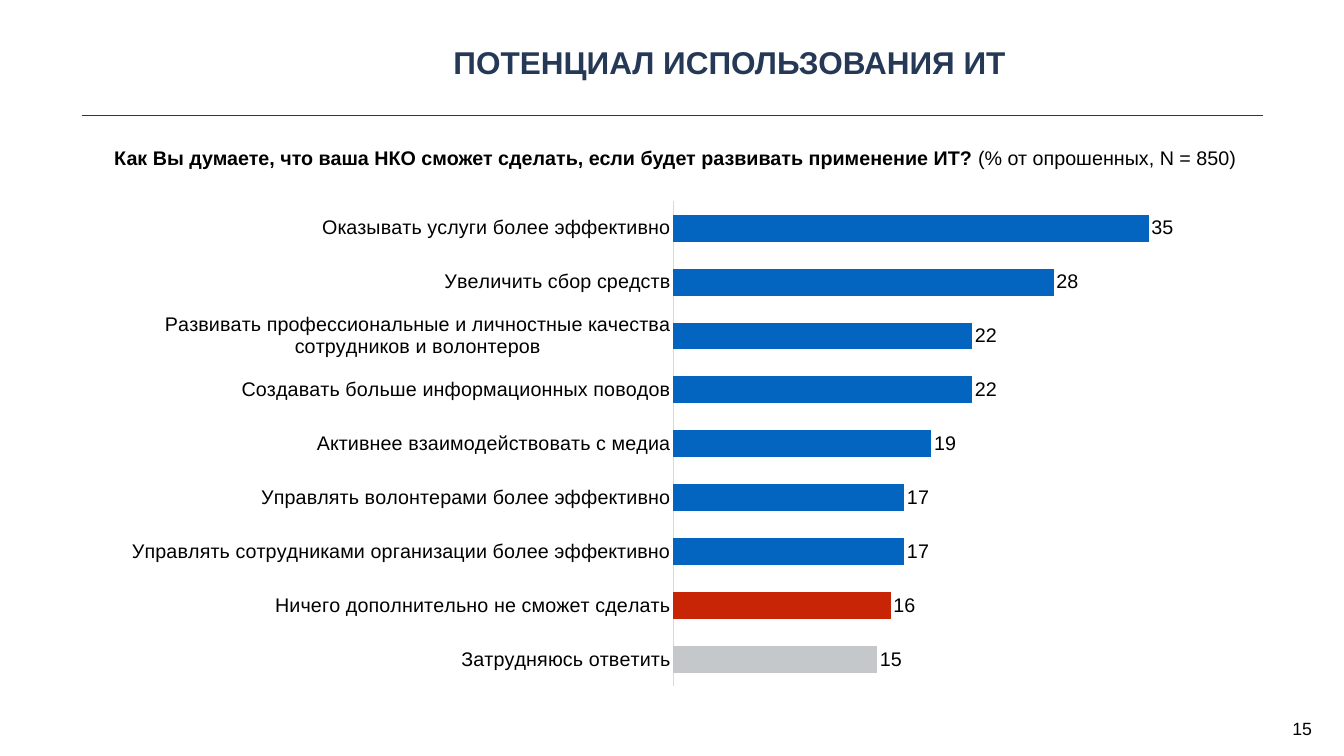
import pptx
import pptx.chart.data
import pptx.dml.color
import pptx.enum.chart
import pptx.enum.shapes
import pptx.enum.text
import pptx.oxml
import pptx.oxml.ns
import pptx.util
from lxml import etree

Inches, Pt = pptx.util.Inches, pptx.util.Pt
RGBColor = pptx.dml.color.RGBColor
qn = pptx.oxml.ns.qn

# Content
TITLE = "ПОТЕНЦИАЛ ИСПОЛЬЗОВАНИЯ ИТ"
QUESTION = "Как Вы думаете, что ваша НКО сможет сделать, если будет развивать применение ИТ? "
SAMPLE = "(% от опрошенных, N = 850)"
PAGE = "15"

NAVY = RGBColor(0x25, 0x39, 0x57)
BLACK = RGBColor(0, 0, 0)
BLUE = RGBColor(0x03, 0x65, 0xC0)
RED = RGBColor(0xC8, 0x25, 0x06)
GRAY = RGBColor(0xC4, 0xC8, 0xCB)
AXIS_GRAY = RGBColor(0xD9, 0xD9, 0xD9)
FONT = "Arial"

ANSWERS = [
    ("Оказывать услуги более эффективно", 35, BLUE),
    ("Увеличить сбор средств", 28, BLUE),
    ("Развивать профессиональные и личностные качества сотрудников и волонтеров", 22, BLUE),
    ("Создавать больше информационных поводов", 22, BLUE),
    ("Активнее взаимодействовать с медиа", 19, BLUE),
    ("Управлять волонтерами более эффективно", 17, BLUE),
    ("Управлять сотрудниками организации более эффективно", 17, BLUE),
    ("Ничего дополнительно не сможет сделать", 16, RED),
    ("Затрудняюсь ответить", 15, GRAY),
]
PLOT_AREA = {"x": 0.501, "y": 0.021, "w": 0.487, "h": 0.958}


def format_font(font, size=20, color=BLACK, bold=False):
    font.name, font.size, font.bold = FONT, Pt(size), bold
    font.color.rgb = color


def write(sp, text, **fmt):
    """Add a formatted run to the shape's first paragraph."""
    r = sp.text_frame.paragraphs[0].add_run()
    r.text = text
    format_font(r.font, **fmt)


def place(sp, left, top, width, height, inset=(0.06, 0.06), wrap=True):
    """Set the shape's box and make its paragraph centred and unbulleted."""
    sp.left, sp.top = Inches(left), Inches(top)
    sp.width, sp.height = Inches(width), Inches(height)
    tf = sp.text_frame
    tf.auto_size = pptx.enum.text.MSO_AUTO_SIZE.NONE
    tf.word_wrap = wrap
    tf.vertical_anchor = pptx.enum.text.MSO_ANCHOR.MIDDLE
    tf.margin_left = tf.margin_right = Inches(inset[0])
    tf.margin_top = tf.margin_bottom = Inches(inset[1])
    p = tf.paragraphs[0]
    p.alignment = pptx.enum.text.PP_ALIGN.CENTER
    p.space_before = Pt(0)
    pPr = p._p.get_or_add_pPr()
    pPr.set("marL", "0")
    pPr.set("indent", "0")
    etree.SubElement(pPr, qn("a:buNone"))


prs = pptx.Presentation()
prs.slide_width, prs.slide_height = Inches(18.96), Inches(10.67)
s = prs.slides.add_slide(prs.slide_layouts[1])

# Title and the rule below it
title, question = s.placeholders
place(title, 2.77, 0.55, 15.05, 0.66)
write(title, TITLE, size=32, color=NAVY, bold=True)

rule = s.shapes.add_connector(pptx.enum.shapes.MSO_CONNECTOR.STRAIGHT,
                              Inches(1.15), Inches(1.63), Inches(17.82), Inches(1.63))
rule.line.color.rgb, rule.line.width = NAVY, Pt(1)
etree.SubElement(rule._element.spPr, qn("a:effectLst"))

# Survey question
place(question, 1.19, 1.97, 16.67, 0.5, inset=(0.16, 0.08))
write(question, QUESTION, bold=True)
write(question, SAMPLE)

# Bar chart
data = pptx.chart.data.CategoryChartData()
data.categories = [answer for answer, _, _ in ANSWERS]
data.add_series("Series 1", [share for _, share, _ in ANSWERS])
chart = s.shapes.add_chart(pptx.enum.chart.XL_CHART_TYPE.BAR_CLUSTERED, Inches(1.62), Inches(2.69),
                           Inches(15.73), Inches(7.15), data).chart
chart.has_legend = chart.has_title = False
format_font(chart.font)

cat_axis = chart.category_axis
cat_axis.reverse_order = True
cat_axis.major_tick_mark = pptx.enum.chart.XL_TICK_MARK.NONE
cat_axis.format.line.color.rgb, cat_axis.format.line.width = AXIS_GRAY, Pt(0.75)
val_axis = chart.value_axis
val_axis.minimum_scale, val_axis.maximum_scale = 0, 40
val_axis.has_major_gridlines = False
val_axis.visible = False

plot = chart.plots[0]
plot.gap_width = 100
plot.vary_by_categories = False
plot.has_data_labels = True
labels = plot.data_labels
labels.show_value = True
labels.position = pptx.enum.chart.XL_LABEL_POSITION.OUTSIDE_END
format_font(labels.font)

series = plot.series[0]
series.format.fill.solid()
series.format.fill.fore_color.rgb = BLUE
for i, (_, _, color) in enumerate(ANSWERS):
    if color != BLUE:
        fill = series.points[i].format.fill
        fill.solid()
        fill.fore_color.rgb = color

# Fixed inner plot area
plot_area = chart._chartSpace.chart.plotArea
for old in plot_area.findall(qn("c:layout")):
    plot_area.remove(old)
layout = etree.Element(qn("c:layout"))
manual = etree.SubElement(layout, qn("c:manualLayout"))
settings = [("layoutTarget", "inner"), ("xMode", "edge"), ("yMode", "edge"), *PLOT_AREA.items()]
for tag, value in settings:
    etree.SubElement(manual, qn("c:" + tag)).set("val", str(value))
plot_area.insert(0, layout)

# Page number
page = s.shapes.add_textbox(0, 0, 0, 0)
place(page, 18.1, 10.07, 0.54, 0.42, wrap=False)
write(page, PAGE, size=18)

prs.save("out.pptx")
